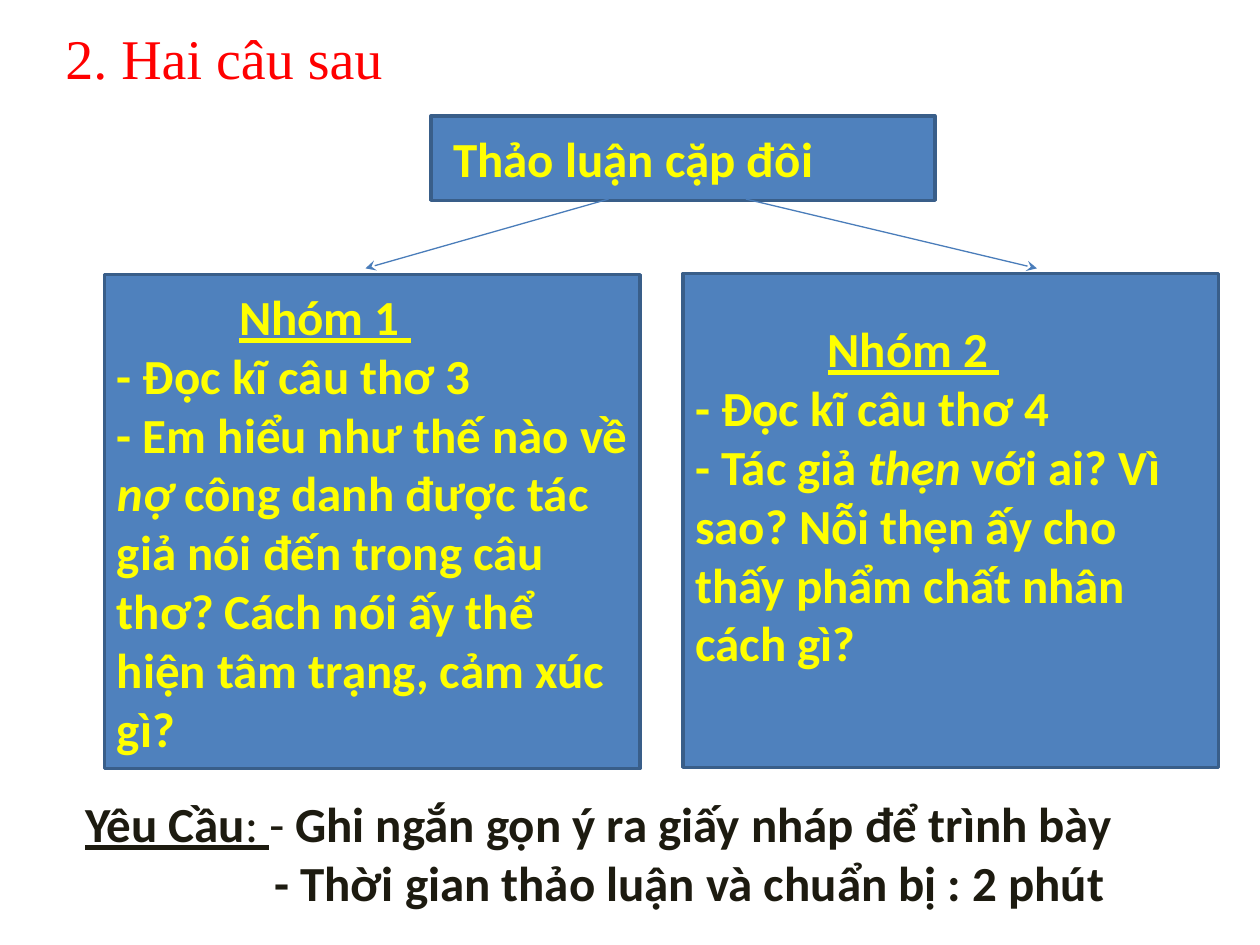
from dataclasses import dataclass

from lxml import etree
from pptx import Presentation
from pptx.dml.color import RGBColor
from pptx.enum import shapes, text
from pptx.oxml import ns
from pptx.util import Inches, Pt


@dataclass(frozen=True)
class Theme:
    box: RGBColor = RGBColor.from_string("4F81BD")
    border: RGBColor = RGBColor.from_string("395E89")
    arrow: RGBColor = RGBColor.from_string("4A7DBA")
    yellow: RGBColor = RGBColor.from_string("FFFF00")
    dark: RGBColor = RGBColor.from_string("1D1B10")
    red: RGBColor = RGBColor.from_string("FF0000")
    body_font: str = "Calibri"
    title_font: str = "Times New Roman"
    body_size: int = 28
    title_size: int = 32


THEME = Theme()


@dataclass(frozen=True)
class Line:
    runs: tuple
    indent: float = 0


def write_lines(tf, lines, color, font=THEME.body_font, size=THEME.body_size, bold=True):
    tf.word_wrap = True
    for i, line in enumerate(lines):
        p = tf.add_paragraph() if i else tf.paragraphs[0]
        p.alignment = text.PP_ALIGN.LEFT
        p.font.name = font
        p.font.size = Pt(size)
        p.font.bold = bold
        p.font.color.rgb = color
        if line.indent:
            p._p.get_or_add_pPr().set("indent", str(Inches(line.indent)))
        for content, style in line.runs:
            r = p.add_run()
            r.text = content
            r.font.name = font
            r.font.size = Pt(size)
            r.font.color.rgb = color
            r.font.bold = bold and "regular" not in style
            r.font.italic = "italic" in style
            r.font.underline = "underline" in style


def add_box(s, left, top, width, height, lines, lift=0):
    sp = s.shapes.add_shape(
        shapes.MSO_SHAPE.RECTANGLE,
        Inches(left), Inches(top), Inches(width), Inches(height),
    )
    sp.shadow.inherit = False
    sp.fill.solid()
    sp.fill.fore_color.rgb = THEME.box
    sp.line.color.rgb = THEME.border
    sp.line.width = Pt(2)
    tf = sp.text_frame
    tf.vertical_anchor = text.MSO_ANCHOR.MIDDLE
    tf.margin_bottom = Inches(0.05 + 2 * lift)
    write_lines(tf, lines, THEME.yellow)


def add_group(s, left, top, name, indent, tasks, lift=0):
    heading = Line(((name + " ", "underline"),), indent)
    add_box(s, left, top, 4.25, 3.92, [heading, *tasks], lift)


def add_arrow(s, start, end):
    c = s.shapes.add_connector(
        shapes.MSO_CONNECTOR.STRAIGHT, *(Inches(v) for v in start + end)
    )
    c.line.color.rgb = THEME.arrow
    c.line.width = Pt(0.75)
    etree.SubElement(c.line._get_or_add_ln(), ns.qn("a:tailEnd"), type="stealth")
    etree.SubElement(c._element.spPr, ns.qn("a:effectLst"))


def add_text(s, left, top, width, height, lines, color, **style):
    sp = s.shapes.add_textbox(Inches(left), Inches(top), Inches(width), Inches(height))
    write_lines(sp.text_frame, lines, color, **style)


def main():
    prs = Presentation()
    prs.slide_width, prs.slide_height = Inches(10), Inches(7.5)
    s = prs.slides.add_slide(prs.slide_layouts[6])

    add_group(s, 0.83, 2.18, "Nhóm 1", 0.97, [
        Line((("- Đọc kĩ câu thơ 3", ""),)),
        Line((
            ("- Em hiểu như thế nào về ", ""),
            ("nợ", "italic"),
            (" công danh được tác giả nói đến trong câu thơ? "
             "Cách nói ấy thể hiện tâm trạng, cảm xúc gì?", ""),
        )),
    ])
    add_group(s, 5.42, 2.17, "Nhóm 2", 1.05, [
        Line((("- Đọc kĩ câu thơ 4", ""),)),
        Line((
            ("- Tác giả ", ""),
            ("thẹn", "italic"),
            (" với ai? Vì sao? Nỗi thẹn ấy cho thấy phẩm chất nhân cách gì?", ""),
        )),
    ], lift=0.2)
    add_box(s, 3.42, 0.92, 4, 0.67, [Line((("Thảo luận cặp đôi", ""),), 0.08)])

    add_arrow(s, (4.83, 1.58), (2.9, 2.13))
    add_arrow(s, (5.92, 1.58), (8.23, 2.13))

    add_text(s, 0.58, 6.25, 9, 1.04, [
        Line((
            ("Yêu Cầu", "underline"),
            (": ", "underline regular"),
            ("- ", "regular"),
            ("Ghi ngắn gọn ý ra giấy nháp để trình bày", ""),
        )),
        Line((("- Thời gian thảo luận và chuẩn bị : 2 phút", ""),), 1.5),
    ], THEME.dark)
    add_text(s, 0.42, 0.14, 3, 0.64, [Line((("2. Hai câu sau", ""),))], THEME.red,
             font=THEME.title_font, size=THEME.title_size, bold=False)

    prs.save("out.pptx")


if __name__ == "__main__":
    main()
